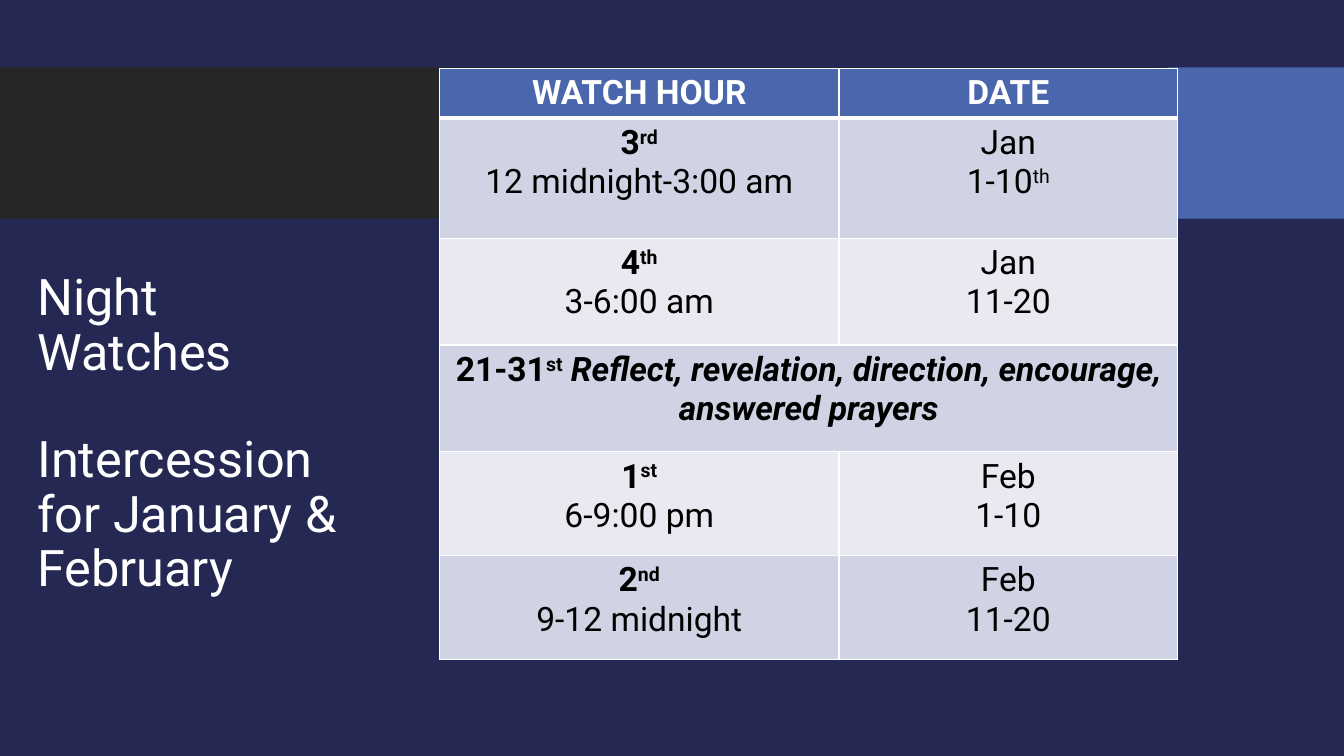
from dataclasses import dataclass

from lxml import etree
from pptx import Presentation
from pptx.dml.color import RGBColor
from pptx.enum.shapes import MSO_SHAPE
from pptx.enum.text import MSO_ANCHOR, MSO_AUTO_SIZE, PP_ALIGN
from pptx.oxml.ns import qn
from pptx.util import Inches, Pt

RECTANGLE = MSO_SHAPE.RECTANGLE
MIDDLE = MSO_ANCHOR.MIDDLE
NO_AUTOFIT = MSO_AUTO_SIZE.NONE
LEFT, CENTER = PP_ALIGN.LEFT, PP_ALIGN.CENTER
TITLE_ONLY = 5


@dataclass(frozen=True)
class Theme:
    """Colours, font and type sizes of the deck."""
    font: str = "Roboto"
    night: str = "242852"
    charcoal: str = "262626"
    blue: str = "4A66AC"
    bands: tuple = ("D0D3E3", "E9EAF1")
    white: str = "FFFFFF"
    black: str = "000000"
    title_size: int = 36
    table_size: int = 24
    rule: int = 1
    header_rule: int = 3


@dataclass(frozen=True)
class Line:
    """A line of cell text: plain, then raised, then italic."""
    plain: str
    raised: str = ""
    italic: str = ""
    bold: bool = False


class SlideBuilder:
    """Draws elements on a slide, with lengths in percent of its size."""

    def __init__(self, deck, theme):
        """Add a title-only slide with the theme's background."""
        self.deck, self.theme = deck, theme
        self.page = deck.slides.add_slide(deck.slide_layouts[TITLE_ONLY])
        self.paint(self.page.background.fill, theme.night)

    def across(self, share):
        """Turn a share of the width into a length."""
        return round(self.deck.slide_width * share / 100)

    def down(self, share):
        """Turn a share of the height into a length."""
        return round(self.deck.slide_height * share / 100)

    def frame(self, left, top, width, height):
        """Turn four shares into a position and size."""
        return self.across(left), self.down(top), self.across(width), self.down(height)

    def paint(self, fill, color):
        """Make a fill solid in one colour."""
        fill.solid()
        fill.fore_color.rgb = RGBColor.from_string(color)

    def style(self, para, size, color, align, bold=False):
        """Set the font and alignment of a paragraph."""
        para.alignment = align
        para.font.name = self.theme.font
        para.font.size = Pt(size)
        para.font.bold = bold
        para.font.color.rgb = RGBColor.from_string(color)

    def band(self, color, *shares):
        """Draw a plain rectangle."""
        box = self.page.shapes.add_shape(RECTANGLE, *self.frame(*shares))
        box.shadow.inherit = False
        self.paint(box.fill, color)
        box.line.fill.background()

    def title(self, texts, *shares):
        """Fill the title placeholder, one blank line's space between texts."""
        box = self.page.shapes.title
        box.left, box.top, box.width, box.height = self.frame(*shares)
        frame = box.text_frame
        frame.word_wrap = True
        frame.auto_size = NO_AUTOFIT
        frame.vertical_anchor = MIDDLE
        frame.text = "\n".join(texts)
        for index, para in enumerate(frame.paragraphs):
            self.style(para, self.theme.title_size, self.theme.white, LEFT)
            para.line_spacing = 0.9
            para.space_before = Pt(38 if index else 0)

    def border(self, cell, side, width):
        """Rule one side of a cell."""
        props = cell._tc.get_or_add_tcPr()
        rule = etree.SubElement(props, qn(f"a:ln{side}"), w=str(Pt(width)))
        fill = etree.SubElement(rule, qn("a:solidFill"))
        etree.SubElement(fill, qn("a:srgbClr"), val=self.theme.white)

    def cell_text(self, cell, lines, color):
        """Write centred lines into a cell."""
        frame = cell.text_frame
        for index, line in enumerate(lines):
            para = frame.add_paragraph() if index else frame.paragraphs[0]
            self.style(para, self.theme.table_size, color, CENTER, line.bold)
            para.add_run().text = line.plain
            if line.raised:
                span = para.add_run()
                span.text = line.raised
                span._r.get_or_add_rPr().set("baseline", "30000")
            if line.italic:
                span = para.add_run()
                span.text = line.italic
                span.font.italic = True

    def table(self, rows, left, top, widths, heights):
        """Draw a banded table; a row of one cell spans all columns."""
        shares = left, top, sum(widths), sum(heights)
        grid = self.page.shapes.add_table(len(rows), len(widths), *self.frame(*shares)).table
        grid.horz_banding = False
        for column, width in zip(grid.columns, widths):
            column.width = self.across(width)
        for index, (row, height, cells) in enumerate(zip(grid.rows, heights, rows)):
            row.height = self.down(height)
            fill = self.theme.bands[(index - 1) % 2] if index else self.theme.blue
            color = self.theme.black if index else self.theme.white
            for cell in row.cells:
                for side in "LRTB":
                    under_header = (index, side) in ((0, "B"), (1, "T"))
                    self.border(cell, side, self.theme.header_rule if under_header else self.theme.rule)
                self.paint(cell.fill, fill)
            if len(cells) < len(widths):
                grid.cell(index, 0).merge(grid.cell(index, len(widths) - 1))
            for cell, lines in zip(row.cells, cells):
                self.cell_text(cell, lines, color)


def watch(number, ending, hours, month, days, days_ending=""):
    """Make the two cells of one night watch."""
    return ((Line(number, ending, bold=True), Line(hours)),
            (Line(month), Line(days, days_ending)))


WATCHES = (
    ((Line("WATCH HOUR", bold=True),), (Line("DATE", bold=True),)),
    watch("3", "rd", "12 midnight-3:00 am", "Jan", "1-10", "th"),
    watch("4", "th", "3-6:00 am", "Jan", "11-20"),
    ((Line("21-31", "st", " Reflect, revelation, direction, encourage, answered prayers", True),),),
    watch("1", "st", "6-9:00 pm", "Feb", "1-10"),
    watch("2", "nd", "9-12 midnight", "Feb", "11-20"),
)


def main():
    """Build and save the deck."""
    deck = Presentation()
    deck.slide_width, deck.slide_height = Inches(13.33), Inches(7.5)
    theme = Theme()
    slide = SlideBuilder(deck, theme)
    slide.band(theme.charcoal, 0, 8.93, 85.6, 20)
    slide.band(theme.blue, 86.87, 8.93, 13.13, 20)
    slide.title(("Night Watches", "Intercession for January & February"), 2.03, 29.33, 24.76, 56.4)
    slide.table(WATCHES, 32.71, 9.07, (29.71, 25.21), (6, 15.87, 14.13, 14.13, 13.73, 13.73))
    deck.save("out.pptx")


if __name__ == "__main__":
    main()
